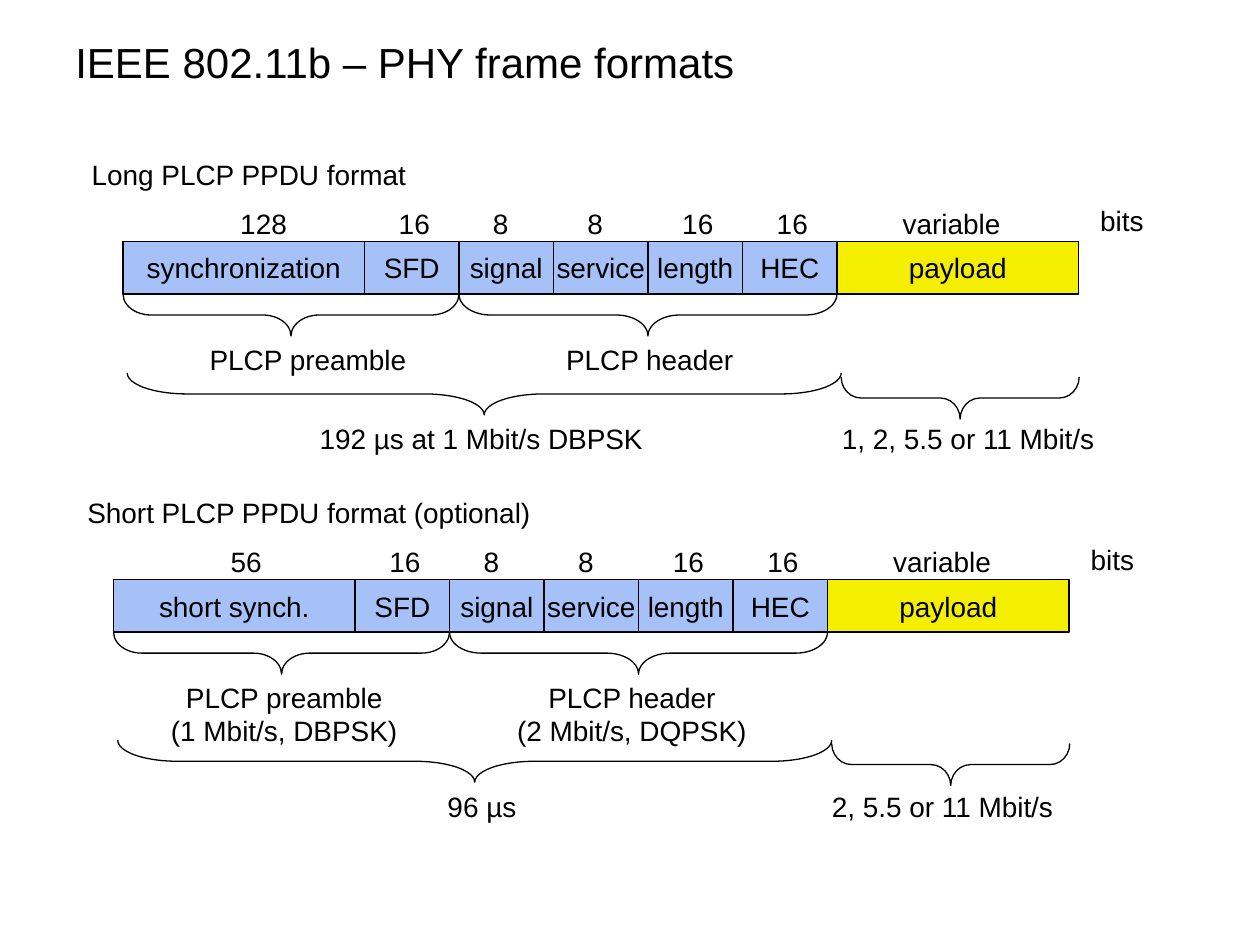
from dataclasses import dataclass

from pptx import Presentation
from pptx import util as u
from pptx.dml.color import RGBColor
from pptx.enum import shapes, text

BLACK = RGBColor(0x00, 0x00, 0x00)
BLUE = RGBColor(0xA6, 0xC1, 0xF8)
YELLOW = RGBColor(0xF4, 0xEE, 0x00)
FONT = "Arial"
FIELD_HEIGHT = 30
BRACE_HEIGHT = 24
LINE_HEIGHT = 26.5
WIDE, NARROW = 138, 54
PREAMBLE_WIDTH = WIDE + NARROW
HEADER_WIDTH = 4 * NARROW


@dataclass(frozen=True)
class Field:
    name: str
    bits: str
    width: float
    bits_width: float
    bits_shift: float  # offset of the bit count from the field's middle
    fill: RGBColor = BLUE


@dataclass(frozen=True)
class Label:
    words: str
    middle: float
    top: float
    width: float


@dataclass(frozen=True)
class Frame:
    left: float
    top: float
    fields: list[Field]
    labels: list[Label]
    duration_top: float  # top of the brace under preamble and header
    rate_top: float  # top of the brace for the payload rate


# Fields shared by both formats
COMMON = [
    Field("SFD", "16", NARROW, 32, 1.4),
    Field("signal", "8", NARROW, 23, -3.2),
    Field("service", "8", NARROW, 23, -3.2),
    Field("length", "16", NARROW, 32, 1.4),
    Field("HEC", "16", NARROW, 32, 1.4),
    Field("payload", "variable", WIDE, 70.5, -3.6, YELLOW),
]

FRAMES = [
    Frame(70.3, 138, [Field("synchronization", "128", WIDE, 41, 11.3)] + COMMON, [
        Label("Long PLCP PPDU format", 142.2, 86.4, 195),
        Label("PLCP preamble", 176, 192.2, 127.5),
        Label("PLCP header", 371.2, 192.2, 110),
        Label("192 µs at 1 Mbit/s DBPSK", 275, 237.6, 200),
        Label("1, 2, 5.5 or 11 Mbit/s", 553.3, 237.6, 160.5),
    ], 213.1, 215.4),
    Frame(64.9, 331.2, [Field("short synch.", "56", WIDE, 32, 6.8)] + COMMON, [
        Label("Short PLCP PPDU format (optional)", 176.6, 279.4, 268.5),
        Label("PLCP preamble\n(1 Mbit/s, DBPSK)", 162.4, 385.2, 144.7),
        Label("PLCP header\n(2 Mbit/s, DQPSK)", 361.1, 385.2, 146.2),
        Label("96 µs", 275.4, 447.8, 54),
        Label("2, 5.5 or 11 Mbit/s", 538.6, 447.8, 142.6),
    ], 423, 424.9),
]


def write(box, words: str, size: float = 16, align=text.PP_ALIGN.CENTER) -> None:
    box.text_frame.text = words
    for para in box.text_frame.paragraphs:
        para.alignment = align
        for span in para.runs:
            span.font.name = FONT
            span.font.size = u.Pt(size)
            span.font.color.rgb = BLACK


def draw_shape(page, kind, left: float, top: float, width: float, height: float):
    shape = page.shapes.add_shape(kind, u.Pt(left), u.Pt(top), u.Pt(width), u.Pt(height))
    shape.shadow.inherit = False
    shape.line.color.rgb = BLACK
    shape.line.width = u.Pt(0.75)
    return shape


def draw_field(page, field: Field, left: float, top: float) -> None:
    box = draw_shape(page, shapes.MSO_SHAPE.RECTANGLE, left, top, field.width, FIELD_HEIGHT)
    box.fill.solid()
    box.fill.fore_color.rgb = field.fill
    box.text_frame.word_wrap = False
    box.text_frame.vertical_anchor = text.MSO_ANCHOR.MIDDLE
    write(box, field.name)


def draw_label(page, label: Label) -> None:
    height = LINE_HEIGHT + 19.5 * label.words.count("\n")
    box = page.shapes.add_textbox(u.Pt(label.middle - label.width / 2), u.Pt(label.top),
                                  u.Pt(label.width), u.Pt(height))
    box.text_frame.word_wrap = False
    box.text_frame.auto_size = text.MSO_AUTO_SIZE.SHAPE_TO_FIT_TEXT
    write(box, label.words)


def draw_brace(page, left: float, top: float, width: float) -> None:
    """Draw a brace that opens upwards and spans the given width."""
    brace = draw_shape(page, shapes.MSO_SHAPE.LEFT_BRACE,
                       left + (width - BRACE_HEIGHT) / 2, top + (BRACE_HEIGHT - width) / 2,
                       BRACE_HEIGHT, width)
    brace.rotation = 270
    brace.adjustments[0] = width / 12 / BRACE_HEIGHT
    brace.fill.background()


def draw_frame(page, frame: Frame) -> None:
    # Row of fields with bit counts
    left = frame.left
    for field in frame.fields:
        draw_field(page, field, left, frame.top)
        middle = left + field.width / 2 + field.bits_shift
        draw_label(page, Label(field.bits, middle, frame.top - 23.6, field.bits_width))
        left += field.width
    draw_label(page, Label("bits", frame.left + 570.7, frame.top - 25, 39.6))

    # Braces under the fields
    bottom = frame.top + FIELD_HEIGHT
    draw_brace(page, frame.left, bottom, PREAMBLE_WIDTH)
    draw_brace(page, frame.left + PREAMBLE_WIDTH, bottom, HEADER_WIDTH)
    draw_brace(page, frame.left + 2.4, frame.duration_top, PREAMBLE_WIDTH + HEADER_WIDTH)
    draw_brace(page, frame.left + 410.4, frame.rate_top, 136)

    # Heading and captions
    for label in frame.labels:
        draw_label(page, label)


def main() -> None:
    deck = Presentation()
    deck.slide_width, deck.slide_height = u.Pt(720), u.Pt(540)
    page = deck.slides.add_slide(deck.slide_layouts[6])

    # Title
    title = page.shapes.add_textbox(u.Pt(36), u.Pt(16), u.Pt(648), u.Pt(39))
    title.text_frame.word_wrap = True
    title.text_frame.vertical_anchor = text.MSO_ANCHOR.MIDDLE
    write(title, "IEEE 802.11b – PHY frame formats", 24, text.PP_ALIGN.LEFT)

    # Long and short frame formats
    for frame in FRAMES:
        draw_frame(page, frame)
    deck.save("out.pptx")


if __name__ == "__main__":
    main()
